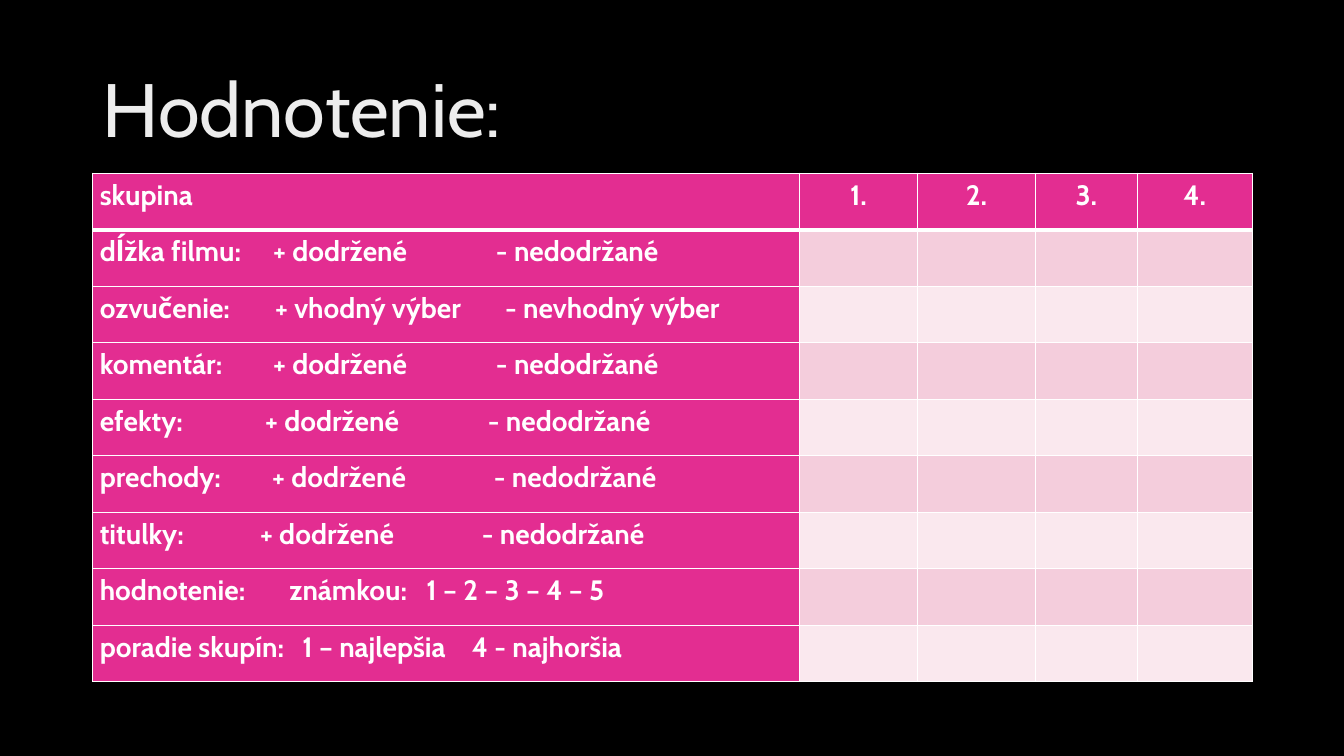
from dataclasses import dataclass

from lxml import etree
from pptx import Presentation
from pptx.dml.color import RGBColor
from pptx.enum.text import MSO_ANCHOR, MSO_AUTO_SIZE, PP_ALIGN
from pptx.oxml import parse_xml
from pptx.oxml.ns import nsdecls, qn
from pptx.table import Table, _Cell
from pptx.util import Inches, Pt

LEFT, CENTER = PP_ALIGN.LEFT, PP_ALIGN.CENTER
MIDDLE, NO_FIT = MSO_ANCHOR.MIDDLE, MSO_AUTO_SIZE.NONE
SLIDE_WIDTH, SLIDE_HEIGHT = Inches(13.33), Inches(7.5)


@dataclass(frozen=True)
class Theme:
    font: str = "Cabin"
    background: str = "000000"
    text: str = "FFFFFF"
    border: str = "FFFFFF"
    accent: str = "E32D91"
    bands: tuple[str, str] = ("F4CDDC", "FAE8EE")
    title_stops: tuple[tuple[int, str], ...] = ((0, "DEDEDE"), (28, "EDEDED"), (100, "FFFFFF"))
    title_angle: int = 80
    title_size: int = 54
    table_size: int = 20
    thin: int = 1
    thick: int = 3


@dataclass(frozen=True)
class Criterion:
    """One row label; its later phrases start at tab stops given in inches."""
    phrases: tuple[str, ...]
    stops: tuple[float, ...] = ()


THEME = Theme()
KEPT, MISSED = "+ dodržené", "- nedodržané"
GROUPS = ("1.", "2.", "3.", "4.")
CRITERIA = (
    Criterion(("skupina",)),
    Criterion(("dĺžka filmu:", KEPT, MISSED), (1.72, 3.93)),
    Criterion(("ozvučenie:", "+ vhodný výber", "- nevhodný výber"), (1.74, 4.02)),
    Criterion(("komentár:", KEPT, MISSED), (1.72, 3.93)),
    Criterion(("efekty:", KEPT, MISSED), (1.64, 3.85)),
    Criterion(("prechody:", KEPT, MISSED), (1.71, 3.91)),
    Criterion(("titulky:", KEPT, MISSED), (1.59, 3.79)),
    Criterion(("hodnotenie:", "známkou:", "1 – 2 – 3 – 4 – 5"), (1.88, 3.24)),
    Criterion(("poradie skupín:", "1 – najlepšia", "4 - najhoršia"), (2.01, 3.69)),
)

# Layout as percentages of the slide
MARGIN, CONTENT_WIDTH = 6.9, 86.28
TITLE_TOP, TITLE_HEIGHT = 5.33, 19.33
TABLE_TOP, ROW_HEIGHT = 22.93, 7.47
COLUMN_WIDTHS = (52.59, 8.78, 8.78, 7.58, 8.55)


def across(percent: float) -> int:
    return int(SLIDE_WIDTH * percent / 100)


def down(percent: float) -> int:
    return int(SLIDE_HEIGHT * percent / 100)


def add_title(slide, wording: str) -> None:
    title = slide.shapes.title
    title.left, title.top = across(MARGIN), down(TITLE_TOP)
    title.width, title.height = across(CONTENT_WIDTH), down(TITLE_HEIGHT)
    frame = title.text_frame
    frame.text = wording
    frame.vertical_anchor, frame.auto_size, frame.word_wrap = MIDDLE, NO_FIT, True
    heading = frame.paragraphs[0]
    heading.alignment, heading.line_spacing = LEFT, 0.9
    run = heading.runs[0]
    run.font.name, run.font.size = THEME.font, Pt(THEME.title_size)
    stops = "".join(
        f'<a:gs pos="{share * 1000}"><a:srgbClr val="{color}"/></a:gs>'
        for share, color in THEME.title_stops
    )
    run._r.get_or_add_rPr().insert(0, parse_xml(
        f'<a:gradFill {nsdecls("a")}><a:gsLst>{stops}</a:gsLst>'
        f'<a:lin ang="{THEME.title_angle * 60000}" scaled="0"/></a:gradFill>'
    ))


def style_cell(cell: _Cell, color: str, top: int, bottom: int) -> None:
    cell.margin_left = cell.margin_right = Inches(0.07)
    cell.margin_top = cell.margin_bottom = 0
    cell.fill.solid()
    cell.fill.fore_color.rgb = RGBColor.from_string(color)
    sides = (("lnL", THEME.thin), ("lnR", THEME.thin), ("lnT", top), ("lnB", bottom))
    for place, (side, points) in enumerate(sides):
        cell._tc.get_or_add_tcPr().insert(place, parse_xml(
            f'<a:{side} {nsdecls("a")} w="{Pt(points)}"><a:solidFill>'
            f'<a:srgbClr val="{THEME.border}"/></a:solidFill></a:{side}>'
        ))


def write_cell(cell: _Cell, criterion: Criterion, alignment: PP_ALIGN) -> None:
    line = cell.text_frame.paragraphs[0]
    line.text = "\t".join(criterion.phrases)
    if criterion.stops:
        tabs = etree.SubElement(line._p.get_or_add_pPr(), qn("a:tabLst"))
        for stop in criterion.stops:
            etree.SubElement(tabs, qn("a:tab"), pos=str(Inches(stop)), algn="l")
    line.alignment, line.line_spacing = alignment, 1.15
    for run in line.runs:
        run.font.name, run.font.size, run.font.bold = THEME.font, Pt(THEME.table_size), True
        run.font.color.rgb = RGBColor.from_string(THEME.text)


def add_rating_table(slide) -> Table:
    rating = slide.shapes.add_table(
        len(CRITERIA), len(COLUMN_WIDTHS), across(MARGIN), down(TABLE_TOP),
        across(CONTENT_WIDTH), down(ROW_HEIGHT * len(CRITERIA)),
    ).table
    rating.horz_banding = False
    for column, width in zip(rating.columns, COLUMN_WIDTHS):
        column.width = across(width)
    for index, criterion in enumerate(CRITERIA):
        rating.rows[index].height = down(ROW_HEIGHT)
        top = THEME.thick if index == 1 else THEME.thin
        bottom = THEME.thick if index == 0 else THEME.thin
        for position in range(len(COLUMN_WIDTHS)):
            labelled = index == 0 or position == 0
            color = THEME.accent if labelled else THEME.bands[(index - 1) % 2]
            style_cell(rating.cell(index, position), color, top, bottom)
        write_cell(rating.cell(index, 0), criterion, LEFT)
    for position, group in enumerate(GROUPS, start=1):
        write_cell(rating.cell(0, position), Criterion((group,)), CENTER)
    return rating


def main() -> None:
    deck = Presentation()
    deck.slide_width, deck.slide_height = SLIDE_WIDTH, SLIDE_HEIGHT
    slide = deck.slides.add_slide(deck.slide_layouts[5])

    # Background
    slide.background.fill.solid()
    slide.background.fill.fore_color.rgb = RGBColor.from_string(THEME.background)

    # Heading and rating table
    add_title(slide, "Hodnotenie:")
    add_rating_table(slide)
    deck.save("out.pptx")


if __name__ == "__main__":
    main()
